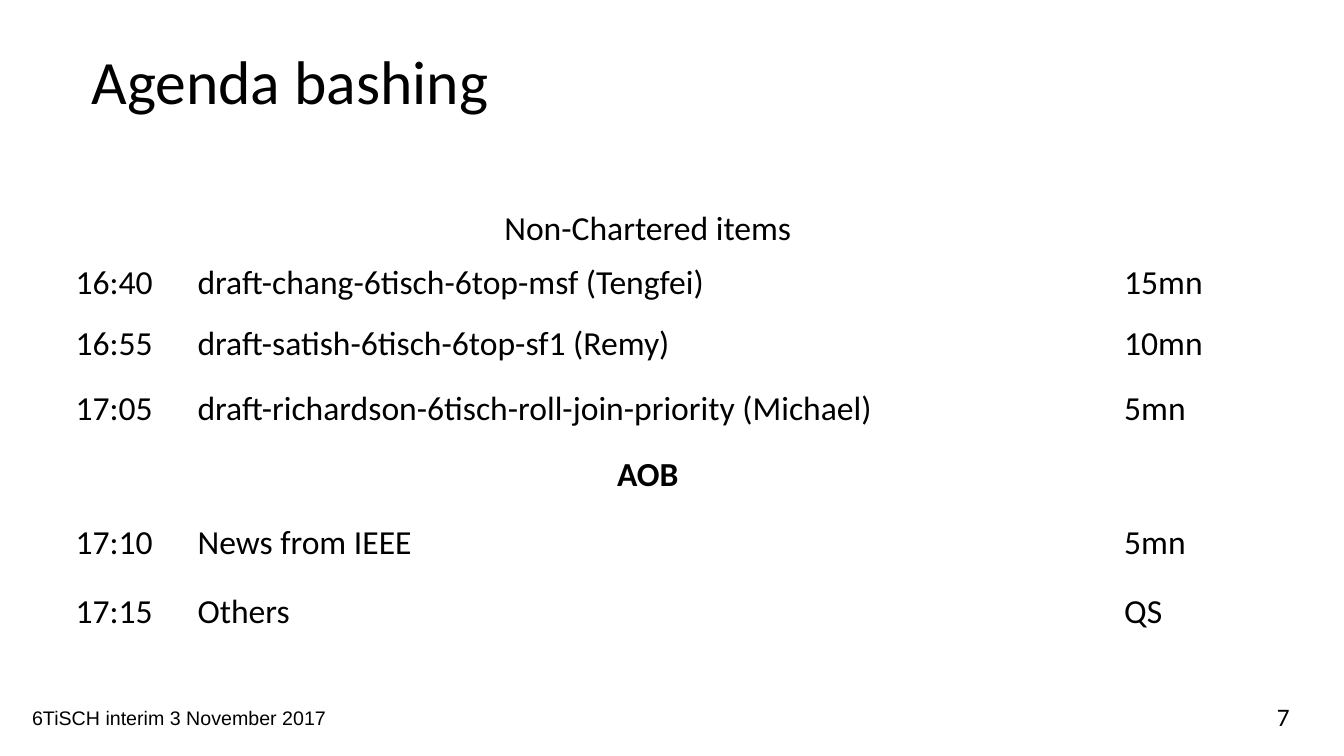
import pptx
import pptx.util
import pptx.dml.color
import pptx.enum.text

Inches = pptx.util.Inches
Align = pptx.enum.text.PP_ALIGN
Anchor = pptx.enum.text.MSO_ANCHOR
COLORS = {"ink": "000000", "paper": "FFFFFF"}


def style(para, size, font="Calibri", bold=False, align=Align.LEFT):
    para.alignment = align
    for run in para.runs:
        run.font.size = pptx.util.Pt(size)
        run.font.name = font
        run.font.bold = bold
        run.font.color.rgb = pptx.dml.color.RGBColor.from_string(COLORS["ink"])


def add_text(box, text, size, **look):
    frame = slide.shapes.add_textbox(*[Inches(n) for n in box]).text_frame
    frame.word_wrap = True
    frame.text = text
    style(frame.paragraphs[0], size, **look)
    return frame


deck = pptx.Presentation()
deck.slide_width, deck.slide_height = Inches(13.33), Inches(7.5)
slide = deck.slides.add_slide(deck.slide_layouts[6])

# Footer, title and page number
add_text((0.22, 6.95, 3.33, 0.34), "6TiSCH interim 3 November 2017", 14, font="Arial")
title = add_text((0.81, 0.11, 11.5, 1.45), "Agenda bashing", 44)
title.vertical_anchor = Anchor.MIDDLE
title.paragraphs[0].line_spacing = 0.9
add_text((9.89, 6.91, 3, 0.4), "7", 18, align=Align.RIGHT)

# Agenda: row height, then time, topic and length; headings have no time
agenda = [
    (0.48, "", "Non-Chartered items", ""),
    (0.6, "16:40", "draft-chang-6tisch-6top-msf (Tengfei)", "15mn"),
    (0.65, "16:55", "draft-satish-6tisch-6top-sf1 (Remy)", "10mn"),
    (0.65, "17:05", "draft-richardson-6tisch-roll-join-priority (Michael)", "5mn"),
    (0.68, "", "AOB", ""),
    (0.68, "17:10", "News from IEEE", "5mn"),
    (0.68, "17:15", "Others", "QS"),
]
widths = [1.21, 9.19, 1.19]
table = slide.shapes.add_table(
    len(agenda), len(widths), Inches(0.62), Inches(2), Inches(11.59), Inches(4.42)
).table
for col, width in zip(table.columns, widths):
    col.width = Inches(width)

for row, (height, *texts) in zip(table.rows, agenda):
    row.height = Inches(height)
    align = Align.LEFT if texts[0] else Align.CENTER
    for cell, text in zip(row.cells, texts):
        cell.fill.solid()
        cell.fill.fore_color.rgb = pptx.dml.color.RGBColor.from_string(COLORS["paper"])
        cell.margin_left = cell.margin_right = Inches(0.13)
        cell.margin_top = cell.margin_bottom = Inches(0.07)
        if text:
            cell.text_frame.text = text
            style(cell.text_frame.paragraphs[0], 24, bold=text == "AOB", align=align)

deck.save("out.pptx")
